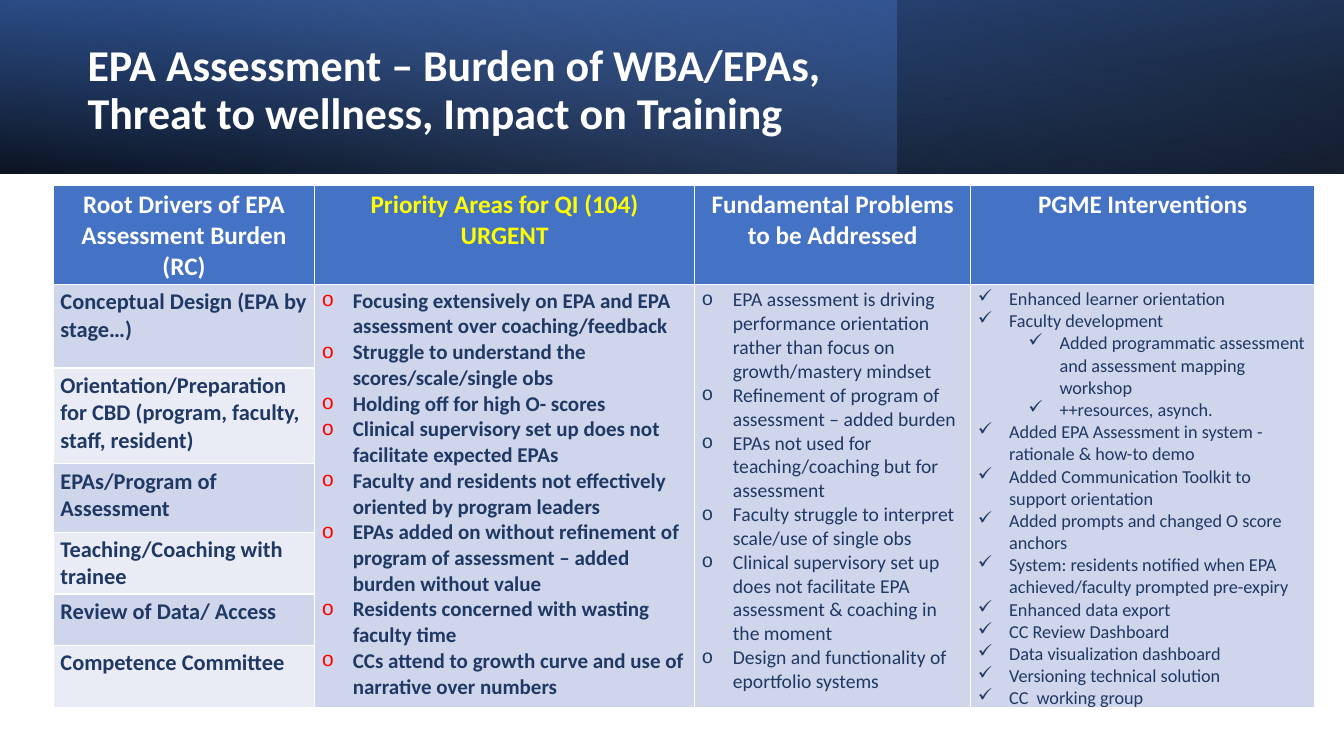
from lxml import etree
from pptx import Presentation
from pptx.dml.color import RGBColor
from pptx.enum.shapes import MSO_SHAPE as Shape
from pptx.enum.text import MSO_ANCHOR as Anchor, PP_ALIGN as Align
from pptx.oxml import parse_xml
from pptx.oxml.ns import qn
from pptx.util import Inches, Pt

DRAWING_NS = "http://schemas.openxmlformats.org/drawingml/2006/main"
FONT = "Calibri"
WHITE, YELLOW, RED = "FFFFFF", "FFFF00", "FF0000"
BLUE, NAVY = "4472C4", "203864"
BANDS = ["CFD5EA", "E9EBF5"]
BANNER_HEIGHT = 1.72

COLUMN_WIDTHS = [2.59, 3.77, 2.74, 3.41]
ROW_HEIGHTS = [0.89, 0.83, 0.95, 0.68, 0.51, 0.51, 0.51]

HEADERS = [
    (["Root Drivers of EPA Assessment Burden (RC)"], WHITE),
    (["Priority Areas for QI (104)", "URGENT"], YELLOW),
    (["Fundamental Problems to be Addressed"], WHITE),
    (["PGME Interventions"], WHITE),
]
ROOT_DRIVERS = [
    "Conceptual Design (EPA by stage…)",
    "Orientation/Preparation for CBD (program, faculty, staff, resident)",
    "EPAs/Program of Assessment",
    "Teaching/Coaching with trainee",
    "Review of Data/ Access",
    "Competence Committee",
]
PRIORITY_AREAS = [
    "Focusing extensively on EPA and EPA assessment over coaching/feedback",
    "Struggle to understand the scores/scale/single obs",
    "Holding off for high O- scores",
    "Clinical supervisory set up does not facilitate expected EPAs",
    "Faculty and residents not effectively oriented by program leaders",
    "EPAs added on without refinement of program of assessment – added burden without value",
    "Residents concerned with wasting faculty time",
    "CCs attend to growth curve and use of narrative over numbers",
]
PROBLEMS = [
    "EPA assessment is driving performance orientation rather than focus on growth/mastery mindset",
    "Refinement of program of assessment – added burden",
    "EPAs not used for teaching/coaching but for assessment",
    "Faculty struggle to interpret scale/use of single obs",
    "Clinical supervisory set up does not facilitate EPA assessment & coaching in the moment",
    "Design and functionality of eportfolio systems",
]
# A nested list holds second-level items
INTERVENTIONS = [
    "Enhanced learner orientation",
    "Faculty development",
    ["Added programmatic assessment and assessment mapping workshop",
     "++resources, asynch."],
    "Added EPA Assessment in system - rationale & how-to demo",
    "Added Communication Toolkit to support orientation",
    "Added prompts and changed O score anchors",
    "System: residents notified when EPA achieved/faculty prompted pre-expiry",
    "Enhanced data export",
    "CC Review Dashboard",
    "Data visualization dashboard",
    "Versioning technical solution",
    "CC  working group",
]


def color(value):
    return RGBColor.from_string(value)


def set_attributes(target, values):
    for name, value in values.items():
        setattr(target, name, value)


def add_text(paragraph, text, size, text_color, bold=True):
    run = paragraph.add_run()
    run.text = text
    set_attributes(run.font, {"name": FONT, "size": Pt(size), "bold": bold})
    run.font.color.rgb = color(text_color)


def add_gradient_panel(slide, width, stops, angle, rotation=0, flip=False):
    """Borderless rectangle; each stop is (position, colour, opacity), in percent."""
    shape = slide.shapes.add_shape(
        Shape.RECTANGLE, 0, 0, Inches(width), Inches(BANNER_HEIGHT))
    shape.shadow.inherit = False
    shape.rotation = rotation
    shape.line.fill.background()
    properties = shape._element.spPr
    if flip:
        properties.find(qn("a:xfrm")).set("flipH", "1")
    stop_xml = "".join(
        f'<a:gs pos="{position * 1000}"><a:srgbClr val="{value}">'
        f'<a:alpha val="{opacity * 1000}"/></a:srgbClr></a:gs>'
        for position, value, opacity in stops)
    gradient = parse_xml(
        f'<a:gradFill xmlns:a="{DRAWING_NS}" rotWithShape="1">'
        f'<a:gsLst>{stop_xml}</a:gsLst>'
        f'<a:lin ang="{angle * 60000}" scaled="0"/></a:gradFill>')
    properties.find(qn("a:prstGeom")).addnext(gradient)


def add_title(slide, text):
    box = slide.shapes.add_textbox(
        Inches(0.77), Inches(0.27), Inches(7.72), Inches(1.27))
    set_attributes(box.text_frame, {
        "word_wrap": True, "vertical_anchor": Anchor.MIDDLE})
    paragraph = box.text_frame.paragraphs[0]
    set_attributes(paragraph, {"line_spacing": 0.9, "space_after": Pt(6)})
    add_text(paragraph, text, 31.4, WHITE)


def set_bullet(paragraph, mark, level, bullet_color=None, bullet_font=None):
    properties = paragraph._p.get_or_add_pPr()
    properties.set("marL", str(Inches(0.31 + 0.5 * level)))
    properties.set("indent", str(Inches(-0.31)))
    if bullet_color:
        holder = etree.SubElement(properties, qn("a:buClr"))
        etree.SubElement(holder, qn("a:srgbClr")).set("val", bullet_color)
    if bullet_font:
        etree.SubElement(properties, qn("a:buFont")).set("typeface", bullet_font)
    etree.SubElement(properties, qn("a:buChar")).set("char", mark)


def flatten(items):
    for item in items:
        if isinstance(item, list):
            yield from ((text, 1) for text in item)
        else:
            yield item, 0


def fill_cell(cell, items, fill, size, text_color, bold=True, align=None, bullet=None):
    cell.fill.solid()
    cell.fill.fore_color.rgb = color(fill)
    set_attributes(cell, {
        "margin_left": Inches(0.07), "margin_right": Inches(0.07),
        "margin_top": Inches(0.04), "margin_bottom": Inches(0.04)})
    frame = cell.text_frame
    for index, (text, level) in enumerate(flatten(items)):
        paragraph = frame.add_paragraph() if index else frame.paragraphs[0]
        set_attributes(paragraph, {"alignment": align, "level": level})
        if bullet:
            set_bullet(paragraph, level=level, **bullet)
        add_text(paragraph, text, size, text_color, bold)


def add_burden_table(slide):
    table = slide.shapes.add_table(
        len(ROW_HEIGHTS), len(COLUMN_WIDTHS),
        Inches(0.53), Inches(1.84), Inches(12.52), Inches(5.43)).table
    for column, width in zip(table.columns, COLUMN_WIDTHS):
        column.width = Inches(width)
    for row, height in zip(table.rows, ROW_HEIGHTS):
        row.height = Inches(height)

    # Header row and first column
    for index, (lines, text_color) in enumerate(HEADERS):
        fill_cell(table.cell(0, index), lines, BLUE, 18, text_color, align=Align.CENTER)
    for index, driver in enumerate(ROOT_DRIVERS):
        fill_cell(table.cell(index + 1, 0), [driver], BANDS[index % 2], 16, NAVY)

    # Bulleted columns, each merged over all body rows
    circle = {"mark": "o", "bullet_font": "Courier New"}
    lists = [
        (PRIORITY_AREAS, 15, True, {**circle, "bullet_color": RED}),
        (PROBLEMS, 14, False, circle),
        (INTERVENTIONS, 13, False, {"mark": "✓"}),
    ]
    for index, (items, size, bold, bullet) in enumerate(lists, start=1):
        cell = table.cell(1, index)
        cell.merge(table.cell(len(ROOT_DRIVERS), index))
        fill_cell(cell, items, BANDS[0], size, NAVY, bold, bullet=bullet)


def main():
    presentation = Presentation()
    set_attributes(presentation, {
        "slide_width": Inches(13.33), "slide_height": Inches(7.5)})
    slide = presentation.slides.add_slide(presentation.slide_layouts[6])

    # Banner
    add_gradient_panel(slide, 13.33, [(0, "000000", 96), (100, "2F5597", 100)],
                       100, rotation=180, flip=True)
    add_gradient_panel(slide, 8.89, [(0, BLUE, 41), (74, "8FAADC", 0)], 140)
    add_gradient_panel(slide, 13.33, [(0, "000000", 63), (78, BLUE, 15)],
                       260, flip=True)
    add_title(slide, "EPA Assessment – Burden of WBA/EPAs, "
                     "Threat to wellness, Impact on Training")

    add_burden_table(slide)
    presentation.save("out.pptx")


if __name__ == "__main__":
    main()
